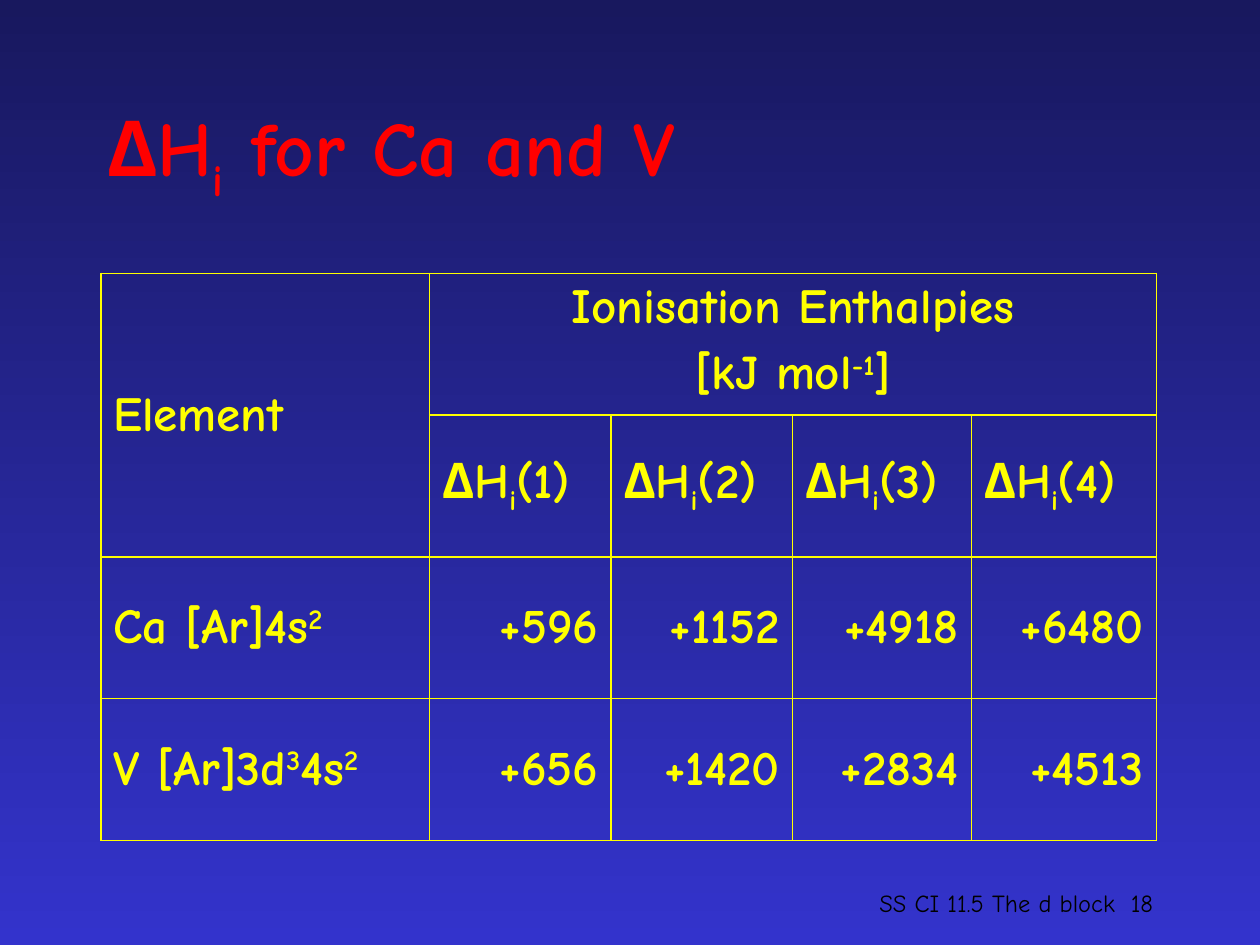
from typing import NamedTuple

from lxml.etree import SubElement
from pptx import Presentation
from pptx.dml.color import RGBColor
from pptx.enum.text import MSO_ANCHOR, PP_ALIGN
from pptx.oxml.ns import qn
from pptx.util import Inches, Pt

FONT = "Comic Neue"
YELLOW, RED, BLACK = "FFFF00", "FF0000", "000000"
SUB, SUPER = -25, 30
COLUMN_WIDTHS = (2.61, 1.44, 1.44, 1.42, 1.47)
ROW_HEIGHT = 1.125


class Part(NamedTuple):
    text: str
    baseline: int = 0


class Style(NamedTuple):
    size: int
    color: str
    bold: bool = False


class Footer(NamedTuple):
    text: str
    left: float
    width: float
    align: PP_ALIGN


class Element(NamedTuple):
    configuration: list[Part]
    enthalpies: tuple[str, ...]


TITLE = Style(44, RED, True)
CELL = Style(28, YELLOW, True)
FOOTER = Style(14, BLACK)
DELTA_H = [Part("ΔH"), Part("i", SUB)]

FOOTERS = (
    Footer("SS CI 11.5 The d block", 6.33, 3.17, PP_ALIGN.CENTER),
    Footer("18", 7.17, 2.08, PP_ALIGN.RIGHT),
)
ELEMENTS = (
    Element([Part("Ca [Ar]4s"), Part("2", SUPER)],
            ("+596", "+1152", "+4918", "+6480")),
    Element([Part("V [Ar]3d"), Part("3", SUPER), Part("4s"), Part("2", SUPER)],
            ("+656", "+1420", "+2834", "+4513")),
)


def rgb(color: str) -> RGBColor:
    return RGBColor.from_string(color)


def write(frame, lines: list[list[Part]], style: Style,
          align: PP_ALIGN = PP_ALIGN.LEFT) -> None:
    for index, parts in enumerate(lines):
        paragraph = frame.add_paragraph() if index else frame.paragraphs[0]
        paragraph.alignment = align
        paragraph.space_before = Pt(0.2 * style.size if index else 0)
        for part in parts:
            run = paragraph.add_run()
            run.text = part.text
            run.font.name = FONT
            run.font.size = Pt(style.size)
            run.font.bold = style.bold
            run.font.color.rgb = rgb(style.color)
            if part.baseline:
                run.font._element.set("baseline", str(part.baseline * 1000))


def outline_cell(cell) -> None:
    """Clear the cell's fill and give it a thin border on every side."""
    properties = cell._tc.get_or_add_tcPr()
    for side in ("lnL", "lnR", "lnT", "lnB"):
        border = SubElement(properties, qn(f"a:{side}"), w=str(Pt(1)))
        fill = SubElement(border, qn("a:solidFill"))
        SubElement(fill, qn("a:srgbClr"), val=YELLOW)
    cell.fill.background()


def add_footer(slide, footer: Footer) -> None:
    box = slide.shapes.add_textbox(
        Inches(footer.left), Inches(6.83), Inches(footer.width), Inches(0.5))
    frame = box.text_frame
    frame.word_wrap = True
    frame.vertical_anchor = MSO_ANCHOR.BOTTOM
    write(frame, [[Part(footer.text)]], FOOTER, footer.align)


def add_enthalpy_table(slide) -> None:
    rows = 2 + len(ELEMENTS)
    table = slide.shapes.add_table(
        rows, len(COLUMN_WIDTHS), Inches(0.8), Inches(2.17),
        Inches(sum(COLUMN_WIDTHS)), Inches(rows * ROW_HEIGHT)).table
    table.first_row = table.horz_banding = False
    for column, width in zip(table.columns, COLUMN_WIDTHS):
        column.width = Inches(width)
    for row in table.rows:
        row.height = Inches(ROW_HEIGHT)
    for cell in table.iter_cells():
        outline_cell(cell)
        cell.vertical_anchor = MSO_ANCHOR.MIDDLE

    element_header, enthalpy_header = table.cell(0, 0), table.cell(0, 1)
    element_header.merge(table.cell(1, 0))
    enthalpy_header.merge(table.cell(0, len(COLUMN_WIDTHS) - 1))
    enthalpy_header.vertical_anchor = MSO_ANCHOR.TOP
    write(element_header.text_frame, [[Part("Element")]], CELL)
    write(enthalpy_header.text_frame,
          [[Part("Ionisation Enthalpies")],
           [Part("[kJ mol"), Part("-1", SUPER), Part("]")]],
          CELL, PP_ALIGN.CENTER)

    for number in range(1, len(COLUMN_WIDTHS)):
        write(table.cell(1, number).text_frame,
              [[*DELTA_H, Part(f"({number})")]], CELL)
    for row, element in enumerate(ELEMENTS, start=2):
        write(table.cell(row, 0).text_frame, [element.configuration], CELL)
        for column, enthalpy in enumerate(element.enthalpies, start=1):
            write(table.cell(row, column).text_frame, [[Part(enthalpy)]],
                  CELL, PP_ALIGN.RIGHT)


def main() -> None:
    presentation = Presentation()
    presentation.slide_width, presentation.slide_height = Inches(10), Inches(7.5)
    slide = presentation.slides.add_slide(presentation.slide_layouts[5])

    background = slide.background.fill
    background.gradient()
    background.gradient_angle = 270
    for stop, color, position in zip(
            background.gradient_stops, ("18185E", "3333CC"), (0, 1)):
        stop.color.rgb = rgb(color)
        stop.position = position

    for footer in FOOTERS:
        add_footer(slide, footer)

    title = slide.shapes.title
    title.left, title.top = Inches(0.75), Inches(0.5)
    title.width, title.height = Inches(8.5), Inches(1.42)
    title.text_frame.vertical_anchor = MSO_ANCHOR.MIDDLE
    write(title.text_frame, [[*DELTA_H, Part(" for Ca and V")]], TITLE)

    add_enthalpy_table(slide)
    presentation.save("out.pptx")


if __name__ == "__main__":
    main()
